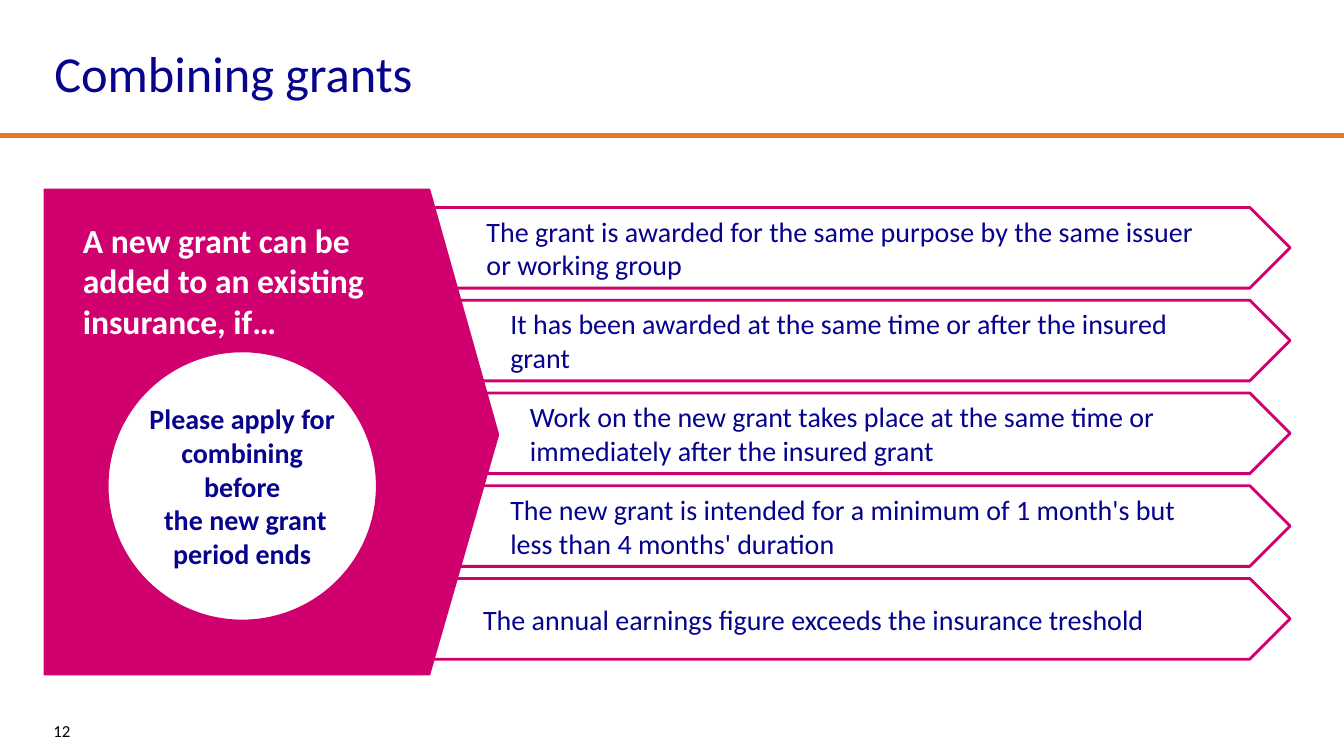
import pptx
import pptx.util
import pptx.dml.color
import pptx.enum.shapes
import pptx.enum.text
import lxml.etree

Pt = pptx.util.Pt
ANCHOR = pptx.enum.text.MSO_ANCHOR
SHAPE = pptx.enum.shapes.MSO_SHAPE

# Content
TITLE = "Combining grants"
PAGE_NUMBER = "12"
LEAD = "A new grant can be added to an existing insurance, if…"
REMINDER = "Please apply for combining before\n the new grant period ends"
# Condition text, left inset, right inset
CONDITIONS = [
    ("The grant is awarded for the same purpose by the same issuer or working group", 156, 39.5),
    ("It has been awarded at the same time or after the insured grant", 173, 39.5),
    ("Work on the new grant takes place at the same time or immediately after the insured grant", 187, 28),
    ("The new grant is intended for a minimum of 1 month's but\vless than 4 months' duration", 173, 39.5),
    ("The annual earnings figure exceeds the insurance treshold", 153.5, 39.5),
]

# Look and layout, in points
COLOURS = {"navy": "06038D", "magenta": "D0006F", "orange": "E87722", "white": "FFFFFF", "black": "000000"}
FONT = "Calibri"
SLIDE_WIDTH, SLIDE_HEIGHT = 960, 540
RULE_Y = 96.5
ARROW_LEFT, ARROW_TOP, ARROW_WIDTH, ARROW_HEIGHT = 191.5, 148.25, 730, 57.6
ARROW_PITCH = 66.25
PANEL_LEFT, PANEL_TOP, PANEL_BOTTOM = 31.2, 134.8, 482.5
PANEL_SHOULDER, PANEL_TIP, PANEL_TIP_Y = 307.2, 356.6, 310.5
CIRCLE_LEFT, CIRCLE_TOP, CIRCLE_SIZE = 76.5, 250.6, 193


def colour(name):
    return pptx.dml.color.RGBColor.from_string(COLOURS[name])


def paint(shape, fill, line=None):
    shape.shadow.inherit = False
    shape.fill.solid()
    shape.fill.fore_color.rgb = colour(fill)
    if line:
        shape.line.color.rgb = colour(line)
        shape.line.width = Pt(2)
    else:
        shape.line.fill.background()


def write(shape, text, size, text_colour, insets=(7.2, 3.6, 7.2, 3.6), bold=False,
          anchor=ANCHOR.MIDDLE, align=pptx.enum.text.PP_ALIGN.LEFT, spacing=None):
    frame = shape.text_frame
    frame.text = text
    frame.word_wrap = True
    frame.vertical_anchor = anchor
    frame.margin_left, frame.margin_top, frame.margin_right, frame.margin_bottom = map(Pt, insets)
    for paragraph in frame.paragraphs:
        paragraph.alignment = align
        paragraph.line_spacing = spacing
        for run in paragraph.runs:
            run.font.name = FONT
            run.font.size = Pt(size)
            run.font.bold = bold
            run.font.color.rgb = colour(text_colour)


presentation = pptx.Presentation()
presentation.slide_width, presentation.slide_height = Pt(SLIDE_WIDTH), Pt(SLIDE_HEIGHT)
slide = presentation.slides.add_slide(presentation.slide_layouts[6])
shapes = slide.shapes

# Rule under the title
rule = shapes.add_connector(pptx.enum.shapes.MSO_CONNECTOR.STRAIGHT,
                            Pt(0), Pt(RULE_Y), Pt(SLIDE_WIDTH), Pt(RULE_Y))
rule.line.color.rgb = colour("orange")
rule.line.width = Pt(3.5)
properties = rule._element.spPr
lxml.etree.SubElement(properties, pptx.oxml.ns.qn("a:effectLst"))

# Title and page number
title = shapes.add_textbox(Pt(31.7), Pt(18.7), Pt(898), Pt(72))
write(title, TITLE, 36, "navy", spacing=0.9)
page_number = shapes.add_textbox(Pt(31), Pt(510), Pt(75), Pt(24))
write(page_number, PAGE_NUMBER, 12, "black")

# Condition arrows
for row, (condition, left_inset, right_inset) in enumerate(CONDITIONS):
    arrow = shapes.add_shape(SHAPE.PENTAGON, Pt(ARROW_LEFT), Pt(ARROW_TOP + row * ARROW_PITCH),
                             Pt(ARROW_WIDTH), Pt(ARROW_HEIGHT))
    paint(arrow, "white", "magenta")
    write(arrow, condition, 20, "navy", (left_inset, 0, right_inset, 0))

# Pointed panel over the arrow tails
outline = shapes.build_freeform(Pt(PANEL_LEFT), Pt(PANEL_TOP))
corners = [(PANEL_SHOULDER, PANEL_TOP), (PANEL_TIP, PANEL_TIP_Y),
           (PANEL_SHOULDER, PANEL_BOTTOM), (PANEL_LEFT, PANEL_BOTTOM)]
outline.add_line_segments([(Pt(x), Pt(y)) for x, y in corners], close=True)
panel = outline.convert_to_shape()
paint(panel, "magenta")
write(panel, LEAD, 24, "white", (28, 22.3, 48, 3.6), bold=True, anchor=ANCHOR.TOP)

# Reminder circle
circle = shapes.add_shape(SHAPE.OVAL, Pt(CIRCLE_LEFT), Pt(CIRCLE_TOP), Pt(CIRCLE_SIZE), Pt(CIRCLE_SIZE))
paint(circle, "white", "magenta")
write(circle, REMINDER, 20, "navy", (0, 0, 0, 0), bold=True, align=pptx.enum.text.PP_ALIGN.CENTER)

presentation.save("out.pptx")
